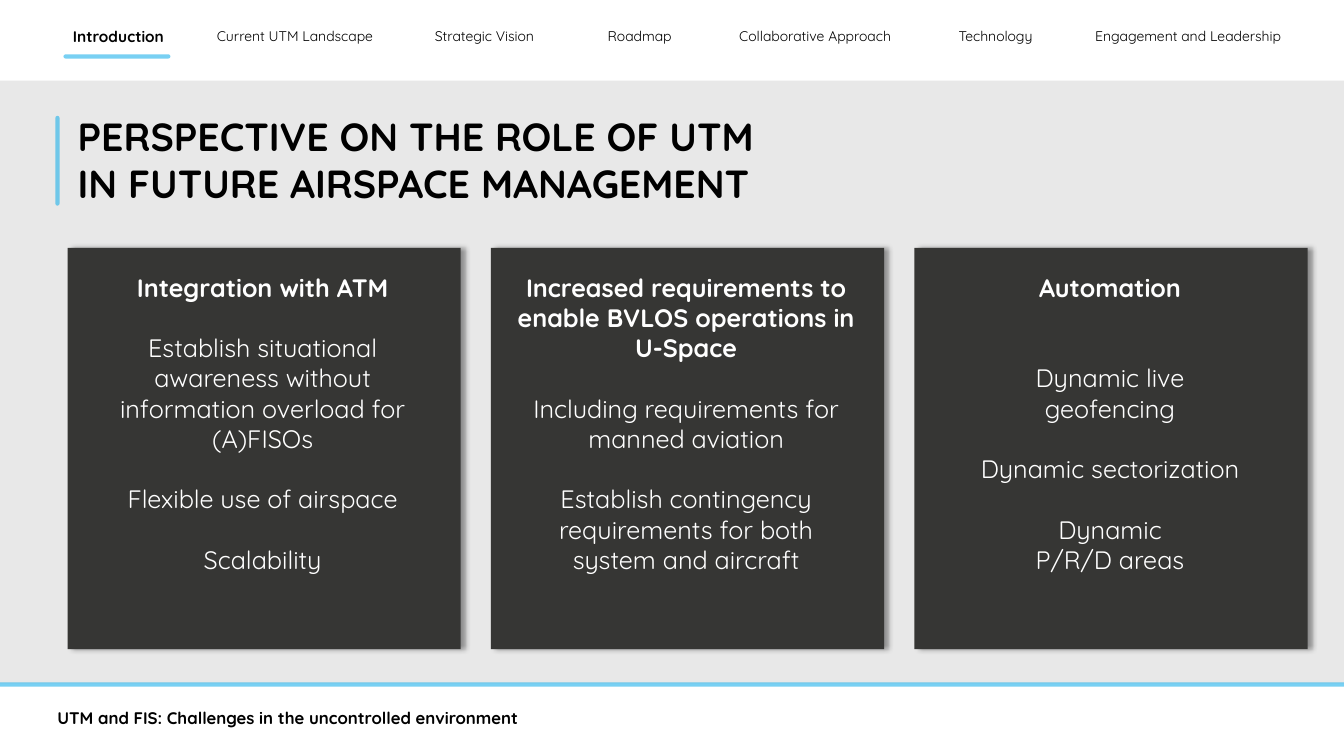
from itertools import accumulate

from lxml import etree
from pptx import Presentation
from pptx import util as u
from pptx.dml.color import RGBColor
from pptx.enum import shapes, text
from pptx.oxml.ns import qn

BLACK, WHITE, CHARCOAL, GREY, SKY = "000000", "FFFFFF", "363634", "D9D9D9", "1FB1EB"
BLANK_LINE = 21.6

NAVIGATION = [
    ("Introduction", 1.41),
    ("Current UTM Landscape", 2.09),
    ("Strategic Vision", 1.67),
    ("Roadmap", 1.41),
    ("Collaborative Approach", 2.07),
    ("Technology", 1.51),
    ("Engagement and Leadership", 2.31),
]

# Text box (left, width, height), heading, then points with the blank lines before each
CARDS = [
    ((0.81, 3.59, 3.13), "Integration with ATM", [
        ("Establish situational awareness without information overload for (A)FISOs", 1),
        ("Flexible use of airspace", 1),
        ("Scalability", 1)]),
    ((5.03, 3.55, 3.74), "Increased requirements to enable BVLOS operations in U-Space", [
        ("Including requirements for manned aviation", 1),
        ("Establish contingency requirements for both system and aircraft", 1)]),
    ((9.58, 2.86, 3.43), "Automation", [
        ("Dynamic live geofencing", 2),
        ("Dynamic sectorization", 1),
        ("Dynamic", 1),
        ("P/R/D areas", 0)]),
]


def rgb(hex_code):
    return RGBColor.from_string(hex_code)


def write(paragraph, words, size=18, color=BLACK, bold=False,
          align=text.PP_ALIGN.LEFT, before=0):
    paragraph.alignment = align
    paragraph.space_before = u.Pt(before)
    run = paragraph.add_run()
    run.text = words
    run.font.name = "Quicksand"
    run.font.size = u.Pt(size)
    run.font.bold = bold
    run.font.color.rgb = rgb(color)


def set_alpha(fill_parent, percent):
    color = fill_parent.find(".//" + qn("a:srgbClr"))
    etree.SubElement(color, qn("a:alpha"), val=str(percent * 1000))


class SlideBuilder:
    def __init__(self, slide):
        self.slide = slide
        self.accent = SKY
        self.accent_alpha = 60

    def title(self, words, left, top, width, height):
        title = self.slide.shapes.title
        title.left, title.top = u.Inches(left), u.Inches(top)
        title.width, title.height = u.Inches(width), u.Inches(height)
        frame = title.text_frame
        frame.word_wrap = True
        frame.auto_size = text.MSO_AUTO_SIZE.NONE
        frame.vertical_anchor = text.MSO_ANCHOR.TOP
        write(frame.paragraphs[0], words, size=28, bold=True)

    def panel(self, left, top, width, height, color, alpha=100, shadow=False):
        panel = self.slide.shapes.add_shape(
            shapes.MSO_SHAPE.RECTANGLE, u.Inches(left), u.Inches(top),
            u.Inches(width), u.Inches(height))
        panel.shadow.inherit = False
        panel.fill.solid()
        panel.fill.fore_color.rgb = rgb(color)
        panel.line.fill.background()
        properties = panel.fill._xPr
        if alpha < 100:
            set_alpha(properties.find(qn("a:solidFill")), alpha)
        if shadow:
            outer = etree.SubElement(
                properties.find(qn("a:effectLst")), qn("a:outerShdw"),
                blurRad=str(u.Pt(4)), dist=str(u.Pt(3)), dir="0",
                algn="l", rotWithShape="0")
            black = etree.SubElement(outer, qn("a:srgbClr"), val=BLACK)
            etree.SubElement(black, qn("a:alpha"), val="40000")

    def text_box(self, left, top, width, height):
        box = self.slide.shapes.add_textbox(
            u.Inches(left), u.Inches(top), u.Inches(width), u.Inches(height))
        box.text_frame.word_wrap = True
        return box.text_frame

    def accent_line(self, x1, y1, x2, y2):
        line = self.slide.shapes.add_connector(
            shapes.MSO_CONNECTOR.STRAIGHT, u.Inches(x1), u.Inches(y1),
            u.Inches(x2), u.Inches(y2))
        line.line.width = u.Pt(3)
        line.line.color.rgb = rgb(self.accent)
        outline = line.line._ln
        outline.set("cap", "rnd")
        set_alpha(outline, self.accent_alpha)
        etree.SubElement(line._element.spPr, qn("a:effectLst"))

    def navigation(self, entries, left, top, height):
        width = list(accumulate(w for _, w in entries))[-1]
        table = self.slide.shapes.add_table(
            1, len(entries), u.Inches(left), u.Inches(top),
            u.Inches(width), u.Inches(height)).table
        table.first_row = table.horz_banding = False
        table.rows[0].height = u.Inches(height)
        for index, (section, section_width) in enumerate(entries):
            current = index == 0
            table.columns[index].width = u.Inches(section_width)
            cell = table.cell(0, index)
            cell.fill.background()
            write(cell.text_frame.paragraphs[0], section, size=11 if current else 10,
                  bold=current, align=text.PP_ALIGN.CENTER)

    def card_text(self, left, top, width, height, heading, points):
        frame = self.text_box(left, top, width, height)
        style = {"color": WHITE, "align": text.PP_ALIGN.CENTER}
        write(frame.paragraphs[0], heading, bold=True, **style)
        for point, blank_lines in points:
            write(frame.add_paragraph(), point, before=blank_lines * BLANK_LINE, **style)


def main():
    deck = Presentation()
    deck.slide_width, deck.slide_height = u.Inches(13.33), u.Inches(7.5)
    builder = SlideBuilder(deck.slides.add_slide(deck.slide_layouts[5]))

    # Background band and its lower edge
    builder.panel(0, 0.8, 13.33, 5.98, GREY, alpha=60)
    builder.accent_line(0, 6.79, 13.33, 6.79)

    # Title: moved in front of the band
    builder.title("PERSPECTIVE ON THE ROLE OF UTM IN FUTURE AIRSPACE MANAGEMENT",
                  0.67, 1.06, 6.92, 1.04)
    title_element = builder.slide.shapes.title._element
    title_element.getparent().append(title_element)
    builder.accent_line(0.57, 1.17, 0.57, 2.02)

    # Three cards
    for index, ((left, width, height), heading, points) in enumerate(CARDS):
        builder.panel(0.67 + index * 4.2, 2.46, 3.9, 3.98, CHARCOAL, shadow=True)
        builder.card_text(left, 2.65, width, height, heading, points)

    # Navigation with the current section underlined
    builder.navigation(NAVIGATION, 0.47, 0.22, 0.43)
    builder.accent_line(0.65, 0.56, 1.67, 0.56)

    # Footer
    footer = builder.text_box(0.47, 6.97, 6.87, 0.3)
    write(footer.paragraphs[0], "UTM and FIS: Challenges in the uncontrolled environment",
          size=12, bold=True)

    deck.save("out.pptx")


if __name__ == "__main__":
    main()
